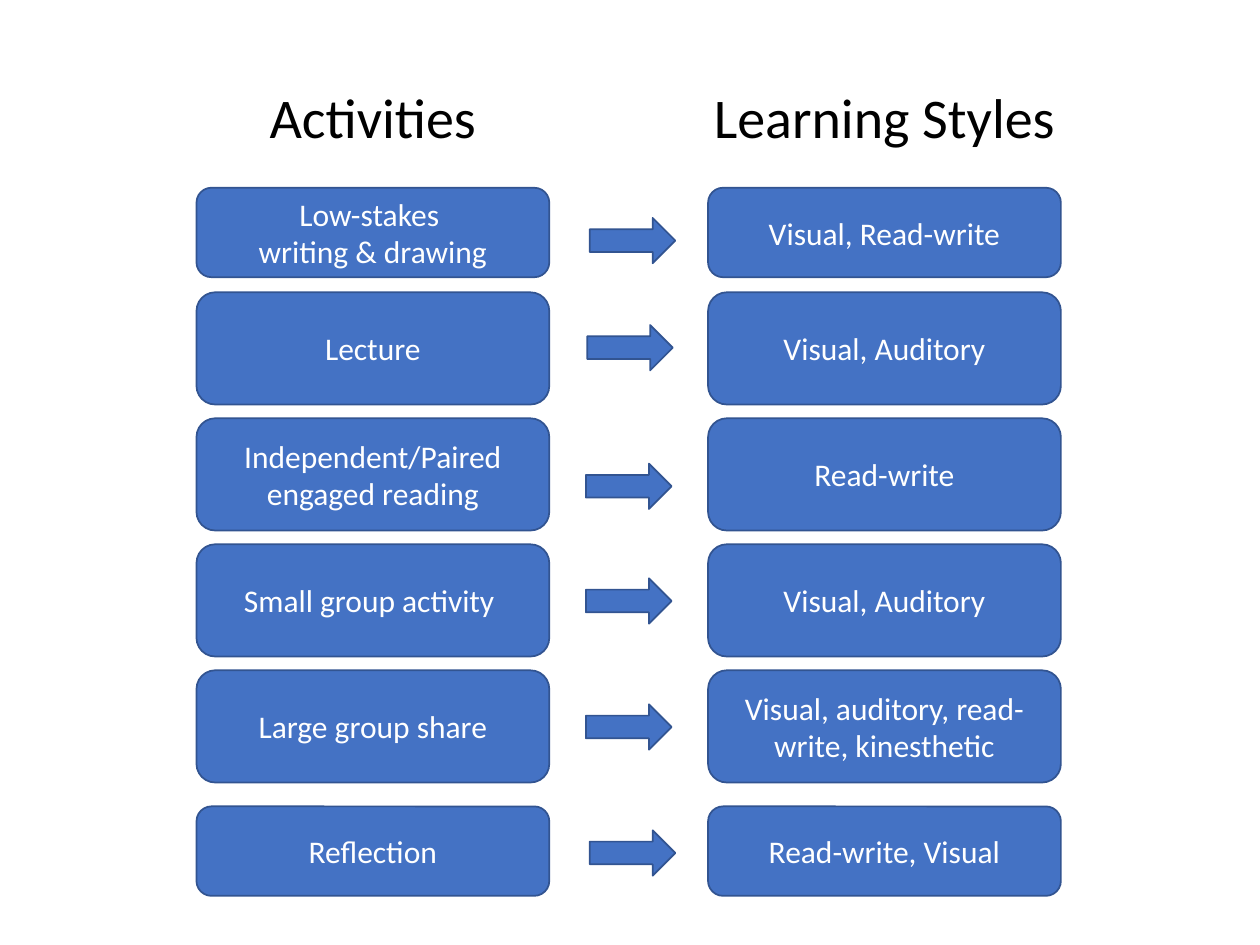
import pptx
import pptx.util
import pptx.dml.color
import pptx.enum.shapes
import pptx.enum.text

Shape = pptx.enum.shapes.MSO_SHAPE
Align = pptx.enum.text.PP_ALIGN
Anchor = pptx.enum.text.MSO_ANCHOR

SLIDE_WIDTH, SLIDE_HEIGHT = pptx.util.Inches(10), pptx.util.Inches(7.5)
COLUMNS, ROWS = 100, 75
COLORS = {"fill": "4472C4", "outline": "325491", "light": "FFFFFF", "dark": "000000"}

CARD_WIDTH, SHORT, TALL = 28, 7.1, 8.9
ACTIVITY_LEFT, STYLE_LEFT = 15.6, 56.2
HEADING_TOP, HEADING_WIDTH, HEADING_HEIGHT = 6.1, 36.6, 6.4
ARROW_WIDTH, ARROW_HEIGHT = 6.8, 3.6
FIRST_TOP, MIDDLE_TOP, LAST_TOP, PITCH = 14.9, 23.2, 64, 10

PAIRS = [
    ("Low-stakes \nwriting & drawing", "Visual, Read-write", (3.2, 2.4)),
    ("Lecture", "Visual, Auditory", (3, 2.6)),
    ("Independent/Paired engaged reading", "Read-write", (2.9, 3.6)),
    ("Small group activity ", "Visual, Auditory", (2.9, 2.7)),
    ("Large group share", "Visual, auditory, read-write, kinesthetic", (2.9, 2.7)),
    ("Reflection", "Read-write, Visual", (3.2, 1.9)),
]


def on_grid(left, top, width, height):
    """Turn grid columns and rows into slide lengths."""
    column, row = SLIDE_WIDTH / COLUMNS, SLIDE_HEIGHT / ROWS
    return [round(n) for n in (left * column, top * row, width * column, height * row)]


def rgb(name):
    """Look up a named colour."""
    return pptx.dml.color.RGBColor.from_string(COLORS[name])


def write(frame, text, size=18, color="light", anchor=Anchor.MIDDLE):
    """Write centred text, one paragraph a line, into a text frame."""
    frame.word_wrap = True
    frame.vertical_anchor = anchor
    frame.text = text
    for paragraph in frame.paragraphs:
        paragraph.alignment = Align.CENTER
        for run in paragraph.runs:
            run.font.name = "Calibri"
            run.font.size = pptx.util.Pt(size)
            run.font.color.rgb = rgb(color)


def add_block(slide, preset, box):
    """Add a blue outlined preset shape in the given grid box."""
    block = slide.shapes.add_shape(preset, *on_grid(*box))
    block.shadow.inherit = False
    block.fill.solid()
    block.fill.fore_color.rgb = rgb("fill")
    block.line.color.rgb = rgb("outline")
    block.line.width = pptx.util.Pt(1)
    return block


def add_heading(slide, text, column_left):
    """Add a heading centred over a column of cards."""
    left = column_left + (CARD_WIDTH - HEADING_WIDTH) / 2
    heading = slide.shapes.add_textbox(
        *on_grid(left, HEADING_TOP, HEADING_WIDTH, HEADING_HEIGHT))
    write(heading.text_frame, text, size=32, color="dark", anchor=Anchor.TOP)


def add_pair(slide, top, height, activity, style, arrow_offset):
    """Add one row: activity card, arrow and learning style card."""
    for left, text in ((ACTIVITY_LEFT, activity), (STYLE_LEFT, style)):
        card = add_block(slide, Shape.ROUNDED_RECTANGLE, (left, top, CARD_WIDTH, height))
        write(card.text_frame, text)
    across, down = arrow_offset
    arrow_left = ACTIVITY_LEFT + CARD_WIDTH + across
    add_block(slide, Shape.RIGHT_ARROW, (arrow_left, top + down, ARROW_WIDTH, ARROW_HEIGHT))


def main():
    """Build and save the slide."""
    deck = pptx.Presentation()
    deck.slide_width, deck.slide_height = SLIDE_WIDTH, SLIDE_HEIGHT
    slide = deck.slides.add_slide(deck.slide_layouts[6])
    middle = [(MIDDLE_TOP + PITCH * i, TALL) for i in range(len(PAIRS) - 2)]
    bands = [(FIRST_TOP, SHORT), *middle, (LAST_TOP, SHORT)]
    for (top, height), pair in zip(bands, PAIRS):
        add_pair(slide, top, height, *pair)
    add_heading(slide, "Activities", ACTIVITY_LEFT)
    add_heading(slide, "Learning Styles", STYLE_LEFT)
    deck.save("out.pptx")


if __name__ == "__main__":
    main()
